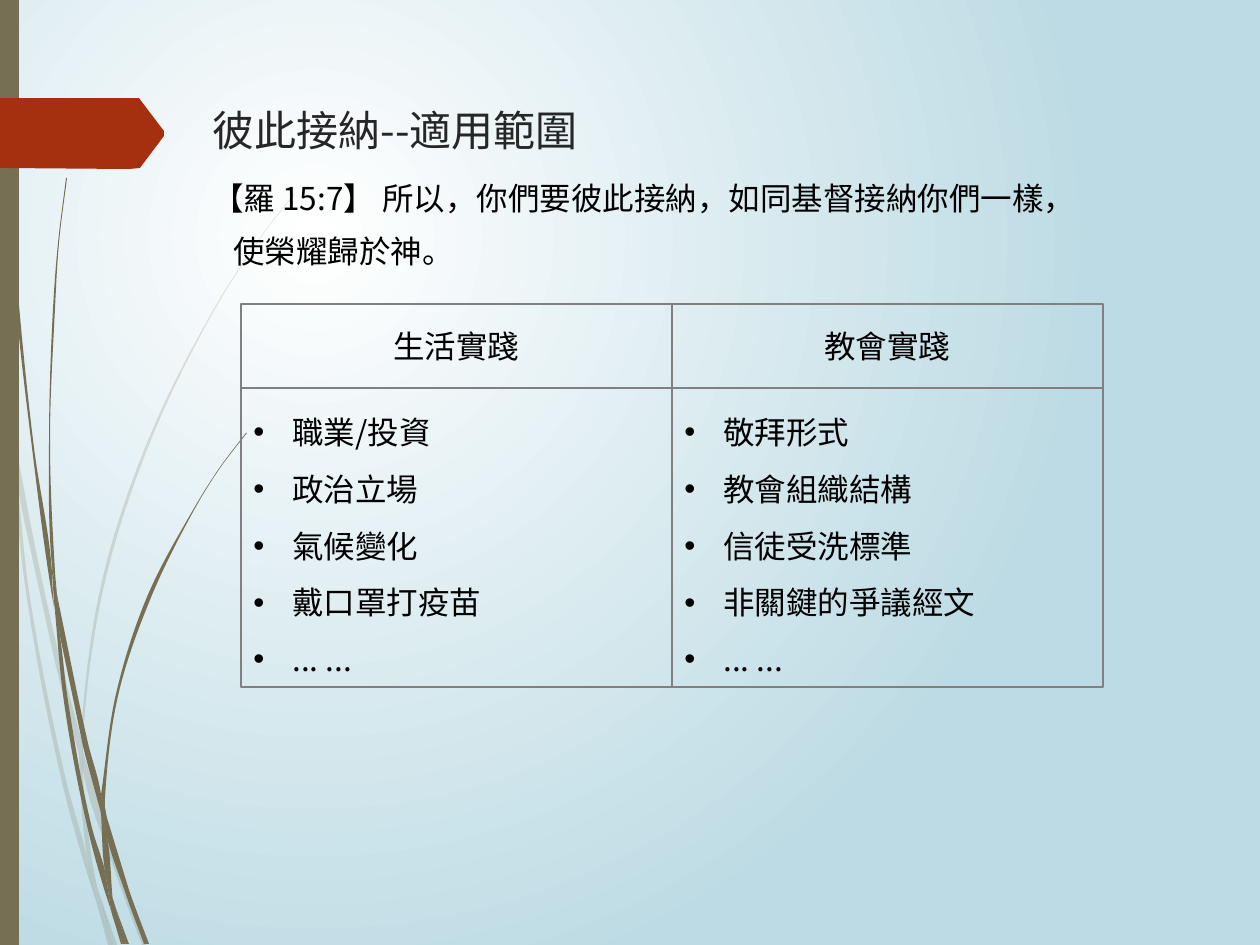
from dataclasses import dataclass
from math import hypot

from lxml import etree
from pptx import Presentation
from pptx import util as u
from pptx.dml.color import RGBColor
from pptx.enum import shapes, text
from pptx.oxml import parse_xml
from pptx.oxml.ns import nsdecls, qn

EMU_PER_PX = 914400 / 126
SLIDE_SIZE = (1260, 945)


@dataclass(frozen=True)
class Theme:
    font: str = "Noto Sans CJK SC"
    bullet_font: str = "Arial"
    title_size: int = 24
    body_size: int = 18
    title: str = "262626"
    body: str = "000000"
    border: str = "808080"
    olive: str = "766F54"
    red: str = "A53010"
    glow: str = "FFFFFF"
    sky: str = "BDDBE4"


THEME = Theme()

TITLE = "彼此接納--適用範圍"
VERSE = ["【羅 15:7】 所以，你們要彼此接納，如同基督接納你們一樣，", "使榮耀歸於神。"]
COLUMNS = {
    "生活實踐": ["職業/投資", "政治立場", "氣候變化", "戴口罩打疫苗", "... ..."],
    "教會實踐": ["敬拜形式", "教會組織結構", "信徒受洗標準", "非關鍵的爭議經文", "... ..."],
}

# Outlines of the grass blades
PALE_BLADES = [
    [(10, 441), (8, 406), (0, 355), (0, 377), (10, 433)],
    [(54, 658), (79, 755), (81, 738), (59, 655), (35, 546), (14, 435), (16, 474), (34, 566)],
    [(87, 765), (83, 751), (83, 769), (116, 874), (142, 945), (146, 945), (120, 872)],
    [(112, 945), (117, 945), (100, 896)],
    [(88, 861), (66, 780), (29, 591), (16, 474), (10, 441), (26, 592), (62, 782), (87, 873),
     (96, 900), (93, 891)],
    [(79, 755), (82, 814), (88, 861), (91, 872), (100, 896), (98, 890), (86, 814), (83, 769),
     (83, 766)],
    [(83, 736), (105, 582), (151, 440), (215, 309), (253, 249), (273, 221), (295, 194),
     (295, 193), (273, 220), (253, 248), (215, 307), (149, 438), (102, 581), (81, 736),
     (81, 738), (83, 751)],
    [(96, 900), (108, 945), (112, 945)],
    [(83, 766), (83, 769), (83, 751), (81, 738), (79, 755)],
    [(91, 872), (88, 861), (93, 891), (96, 900), (112, 945), (100, 896)],
]
DARK_BLADES = [
    [(6, 139), (15, 294), (32, 447), (53, 601), (54, 606), (52, 576), (52, 571), (34, 447),
     (18, 292), (8, 137), (4, 60), (4, 0), (3, 0), (3, 60)],
    [(83, 746), (101, 813), (101, 798), (101, 795), (88, 743), (57, 595), (60, 636)],
    [(107, 818), (105, 808), (105, 827), (125, 892), (144, 944), (149, 944), (129, 890)],
    [(105, 871), (92, 828), (68, 701), (60, 636), (54, 601), (64, 702), (88, 830), (105, 892),
     (111, 910), (110, 903)],
    [(57, 595), (55, 571), (50, 440), (55, 309), (59, 243), (67, 178), (66, 178), (58, 243),
     (53, 309), (49, 440), (52, 566)],
    [(126, 944), (129, 944), (115, 906)],
    [(54, 601), (60, 636), (57, 595), (52, 566), (52, 571)],
    [(105, 798), (118, 696), (150, 600), (193, 512), (218, 471), (232, 452), (247, 433),
     (246, 433), (232, 451), (218, 470), (193, 510), (147, 597), (116, 694), (101, 795),
     (105, 808)],
    [(111, 910), (121, 944), (123, 944)],
    [(101, 813), (105, 871), (110, 890), (115, 906), (113, 902), (105, 827), (102, 820)],
    [(101, 813), (102, 820), (105, 827), (105, 808), (101, 795), (101, 798)],
    [(110, 890), (105, 871), (110, 903), (111, 910), (123, 944), (126, 944), (115, 906)],
]
ARROW = [(164, 136), (140, 168), (129, 169), (0, 168), (0, 98), (139, 98), (164, 131)]


def px(length):
    return u.Emu(round(length * EMU_PER_PX))


def rgb(color):
    return RGBColor.from_string(color)


def set_background(slide):
    fill = slide.background.fill
    fill.gradient()
    for stop, color in zip(fill.gradient_stops, (THEME.glow, THEME.sky)):
        stop.color.rgb = rgb(color)
    gradient = slide.element.find(".//" + qn("a:gradFill"))
    gradient.replace(gradient.find(qn("a:lin")), parse_xml(
        f'<a:path {nsdecls("a")} path="circle">'
        '<a:fillToRect l="50000" t="50000" r="100000" b="100000"/></a:path>'))


def fill_plain(shape, color, alpha=None):
    shape.shadow.inherit = False
    shape.fill.solid()
    shape.fill.fore_color.rgb = rgb(color)
    shape.line.fill.background()
    if alpha is not None:
        node = shape.element.spPr.find(".//" + qn("a:srgbClr"))
        etree.SubElement(node, qn("a:alpha"), val=str(alpha * 1000))


def add_polygon(slide, points, color, alpha=None):
    start, *rest = [(px(x), px(y)) for x, y in points]
    builder = slide.shapes.build_freeform(*start)
    builder.add_line_segments(rest, close=True)
    shape = builder.convert_to_shape()
    fill_plain(shape, color, alpha)
    return shape


def direction(start, end):
    dx, dy = end[0] - start[0], end[1] - start[1]
    length = hypot(dx, dy) or 1
    return dx / length, dy / length


def tangents(before, point, after):
    """Return the arriving and leaving directions: one shared, unless at a corner."""
    arrive, leave = direction(before, point), direction(point, after)
    if arrive[0] * leave[0] + arrive[1] * leave[1] < 0.95:
        return arrive, leave
    shared = direction((0, 0), (arrive[0] + leave[0], arrive[1] + leave[1]))
    return shared, shared


def round_sides(shape):
    """Turn the straight sides of an outline into smooth Bezier curves."""
    nodes = shape.element.spPr.findall(".//" + qn("a:pt"))
    points = [(int(node.get("x")), int(node.get("y"))) for node in nodes]
    if points[-1] == points[0]:
        points.pop()
    count = len(points)
    turns = [tangents(points[i - 1], points[i], points[(i + 1) % count]) for i in range(count)]
    for i, segment in enumerate(shape.element.spPr.findall(".//" + qn("a:lnTo"))):
        if i + 1 >= count:
            break
        start, end = points[i], points[i + 1]
        reach = hypot(end[0] - start[0], end[1] - start[1]) / 3
        leave, arrive = turns[i][1], turns[i + 1][0]
        segment.tag = qn("a:cubicBezTo")
        for sign, anchor, way in ((1, start, leave), (-1, end, arrive)):
            x, y = (round(a + sign * reach * w) for a, w in zip(anchor, way))
            control = etree.Element(qn("a:pt"), x=str(x), y=str(y))
            segment.insert(len(segment) - 1, control)


def write_lines(shape, lines, anchor, size=THEME.body_size, color=THEME.body,
                align=text.PP_ALIGN.LEFT, spacing=None):
    frame = shape.text_frame
    frame.word_wrap = True
    frame.vertical_anchor = anchor
    frame.text = "\n".join(lines)
    for paragraph in frame.paragraphs:
        paragraph.alignment = align
        paragraph.line_spacing = spacing
        font = paragraph.font
        font.name = THEME.font
        font.size = u.Pt(size)
        font.color.rgb = rgb(color)
        defaults = paragraph._p.pPr.find(qn("a:defRPr"))
        etree.SubElement(defaults, qn("a:ea"), typeface=THEME.font)
    return frame.paragraphs


def indent(paragraph, margin, first_line=0):
    properties = paragraph._p.get_or_add_pPr()
    properties.set("marL", str(px(margin)))
    properties.set("indent", str(px(first_line)))


def add_bullet(paragraph):
    indent(paragraph, 39, -39)
    defaults = paragraph._p.pPr.find(qn("a:defRPr"))
    for bullet in (f'a:buFont {nsdecls("a")} typeface="{THEME.bullet_font}"',
                   f'a:buChar {nsdecls("a")} char="•"'):
        defaults.addprevious(parse_xml(f"<{bullet}/>"))


def add_cell(slide, box, line_width):
    cell = slide.shapes.add_shape(shapes.MSO_SHAPE.RECTANGLE, *map(px, box))
    cell.shadow.inherit = False
    cell.fill.background()
    cell.line.color.rgb = rgb(THEME.border)
    cell.line.width = u.Pt(line_width)
    return cell


def add_decoration(slide):
    for blades, alpha in ((PALE_BLADES, 20), (DARK_BLADES, None)):
        for blade in blades:
            round_sides(add_polygon(slide, blade, THEME.olive, alpha))
    band = slide.shapes.add_shape(shapes.MSO_SHAPE.RECTANGLE, 0, 0, px(19), px(SLIDE_SIZE[1]))
    fill_plain(band, THEME.olive)
    add_polygon(slide, ARROW, THEME.red)


def add_title(slide):
    title = slide.shapes.title
    title.left, title.top, title.width, title.height = map(px, (200, 84, 921, 91))
    write_lines(title, [TITLE], text.MSO_ANCHOR.MIDDLE, THEME.title_size, THEME.title)
    title.element.getparent().append(title.element)


def add_verse(slide):
    box = slide.shapes.add_textbox(*map(px, (200, 158, 990, 120)))
    paragraphs = write_lines(box, VERSE, text.MSO_ANCHOR.TOP, spacing=1.4)
    indent(paragraphs[1], 21)


def add_columns(slide):
    left, top, width, head_height, body_height = 241, 304, 431, 84, 299
    lefts = [left + width * index for index in range(len(COLUMNS))]
    for x, heading in zip(lefts, COLUMNS):
        head = add_cell(slide, (x, top, width, head_height), 1.25)
        write_lines(head, [heading], text.MSO_ANCHOR.MIDDLE, align=text.PP_ALIGN.CENTER)
    for x, items in zip(lefts, COLUMNS.values()):
        body = add_cell(slide, (x, top + head_height, width, body_height), 0.75)
        for paragraph in write_lines(body, items, text.MSO_ANCHOR.TOP, spacing=1.5):
            add_bullet(paragraph)


def main():
    presentation = Presentation()
    presentation.slide_width, presentation.slide_height = map(px, SLIDE_SIZE)
    slide = presentation.slides.add_slide(presentation.slide_layouts[5])
    set_background(slide)
    add_decoration(slide)
    add_title(slide)
    add_verse(slide)
    add_columns(slide)
    presentation.save("out.pptx")


if __name__ == "__main__":
    main()
